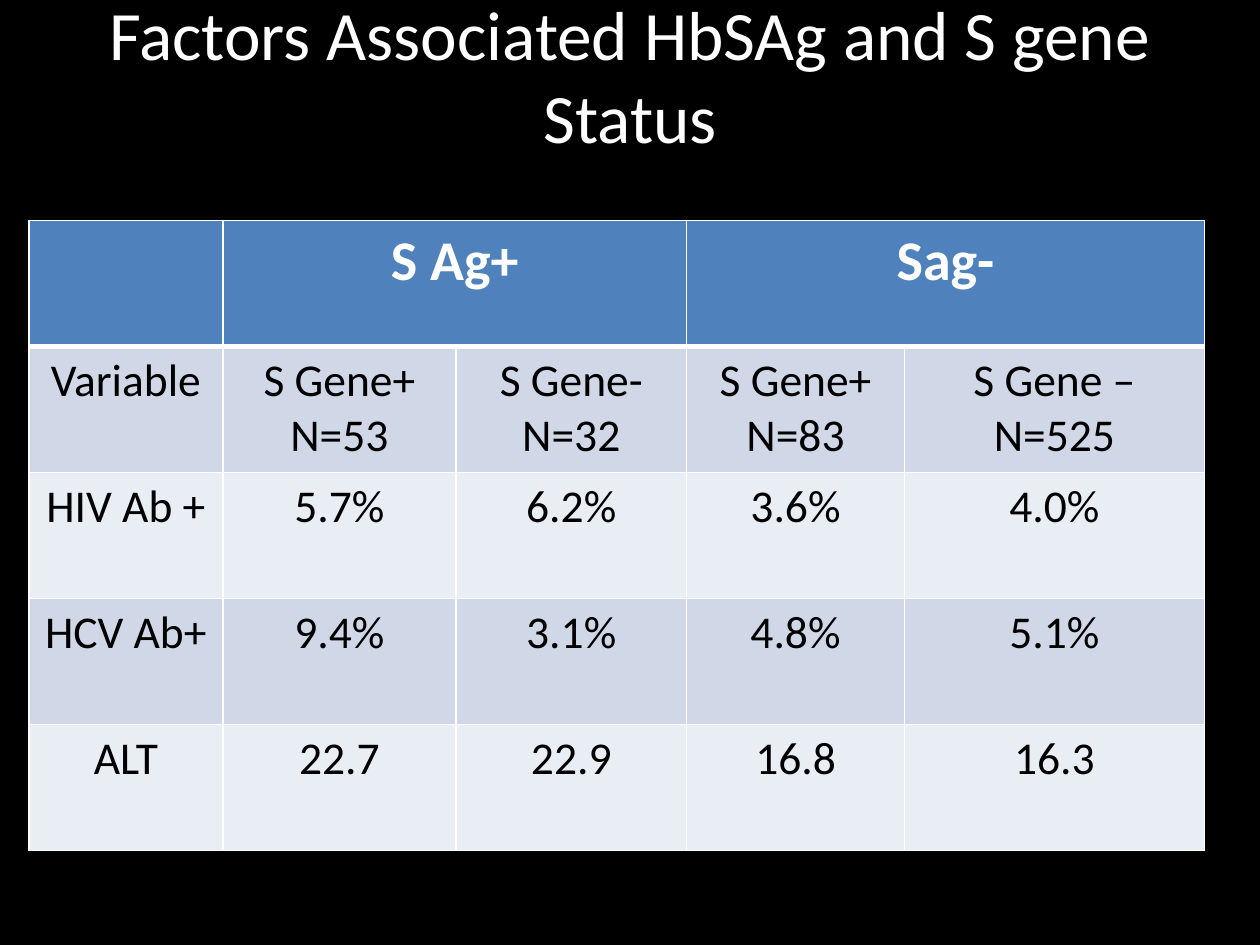
from lxml.etree import SubElement
from pptx import Presentation
from pptx.dml.color import RGBColor
from pptx.enum.text import MSO_ANCHOR, PP_ALIGN
from pptx.oxml.ns import qn
from pptx.util import Inches, Pt

WHITE = RGBColor(0xFF, 0xFF, 0xFF)
BLACK = RGBColor(0x00, 0x00, 0x00)
HEADER_BLUE = RGBColor(0x4F, 0x81, 0xBD)
BANDS = (RGBColor(0xE9, 0xED, 0xF4), RGBColor(0xD0, 0xD8, 0xE8))

TITLE = "Factors Associated HbSAg and S gene Status"
ROWS = [
    ("", "S Ag+", "", "Sag-", ""),
    ("Variable", "S Gene+\nN=53", "S Gene-\nN=32", "S Gene+\nN=83", "S Gene –\nN=525"),
    ("HIV Ab +", "5.7%", "6.2%", "3.6%", "4.0%"),
    ("HCV Ab+", "9.4%", "3.1%", "4.8%", "5.1%"),
    ("ALT", "22.7", "22.9", "16.8", "16.3"),
]
HEADER_SPANS = [(1, 2), (3, 4)]
COLUMN_WIDTHS = [1.54, 1.85, 1.83, 1.73, 2.38]
ROW_HEIGHT = 1

TITLE_FONT = {"name": "Calibri", "size": Pt(39.6), "bold": False}
HEADER_FONT = {"name": "Calibri", "size": Pt(32), "bold": True}
BODY_FONT = {"name": "Calibri", "size": Pt(26), "bold": False}
TITLE_FRAME = {
    "word_wrap": True,
    "vertical_anchor": MSO_ANCHOR.MIDDLE,
    "margin_bottom": Inches(0.72),
}


def write_text(text_frame, text, font_format, color):
    text_frame.text = text
    for paragraph in text_frame.paragraphs:
        paragraph.alignment = PP_ALIGN.CENTER
        for run in paragraph.runs:
            for name, value in font_format.items():
                setattr(run.font, name, value)
            run.font.color.rgb = color


def draw_borders(cell, bottom_width):
    properties = cell._tc.get_or_add_tcPr()
    widths = {"a:lnL": 1, "a:lnR": 1, "a:lnT": 1, "a:lnB": bottom_width}
    for position, (tag, width) in enumerate(widths.items()):
        line = SubElement(properties, qn(tag), w=str(Pt(width)))
        properties.insert(position, line)
        fill = SubElement(line, qn("a:solidFill"))
        SubElement(fill, qn("a:srgbClr"), val=str(WHITE))


def add_title(slide):
    title = slide.shapes.add_textbox(Inches(0.5), Inches(0.3), Inches(9), Inches(1.25))
    for name, value in TITLE_FRAME.items():
        setattr(title.text_frame, name, value)
    write_text(title.text_frame, TITLE, TITLE_FONT, WHITE)


def add_factor_table(slide):
    table = slide.shapes.add_table(
        len(ROWS), len(COLUMN_WIDTHS), Inches(0.23), Inches(1.75),
        Inches(sum(COLUMN_WIDTHS)), Inches(ROW_HEIGHT * len(ROWS)),
    ).table
    for column, width in zip(table.columns, COLUMN_WIDTHS):
        column.width = Inches(width)
    for row_index, texts in enumerate(ROWS):
        is_header = row_index == 0
        font_format = HEADER_FONT if is_header else BODY_FONT
        for column_index, text in enumerate(texts):
            cell = table.cell(row_index, column_index)
            cell.fill.solid()
            cell.fill.fore_color.rgb = HEADER_BLUE if is_header else BANDS[row_index % 2]
            draw_borders(cell, 3 if is_header else 1)
            write_text(cell.text_frame, text, font_format, WHITE if is_header else BLACK)
    for first, last in HEADER_SPANS:
        table.cell(0, first).merge(table.cell(0, last))


def main():
    presentation = Presentation()
    presentation.slide_width = Inches(10)
    presentation.slide_height = Inches(7.5)
    slide = presentation.slides.add_slide(presentation.slide_layouts[6])
    slide.background.fill.solid()
    slide.background.fill.fore_color.rgb = BLACK
    add_title(slide)
    add_factor_table(slide)
    presentation.save("out.pptx")


if __name__ == "__main__":
    main()
